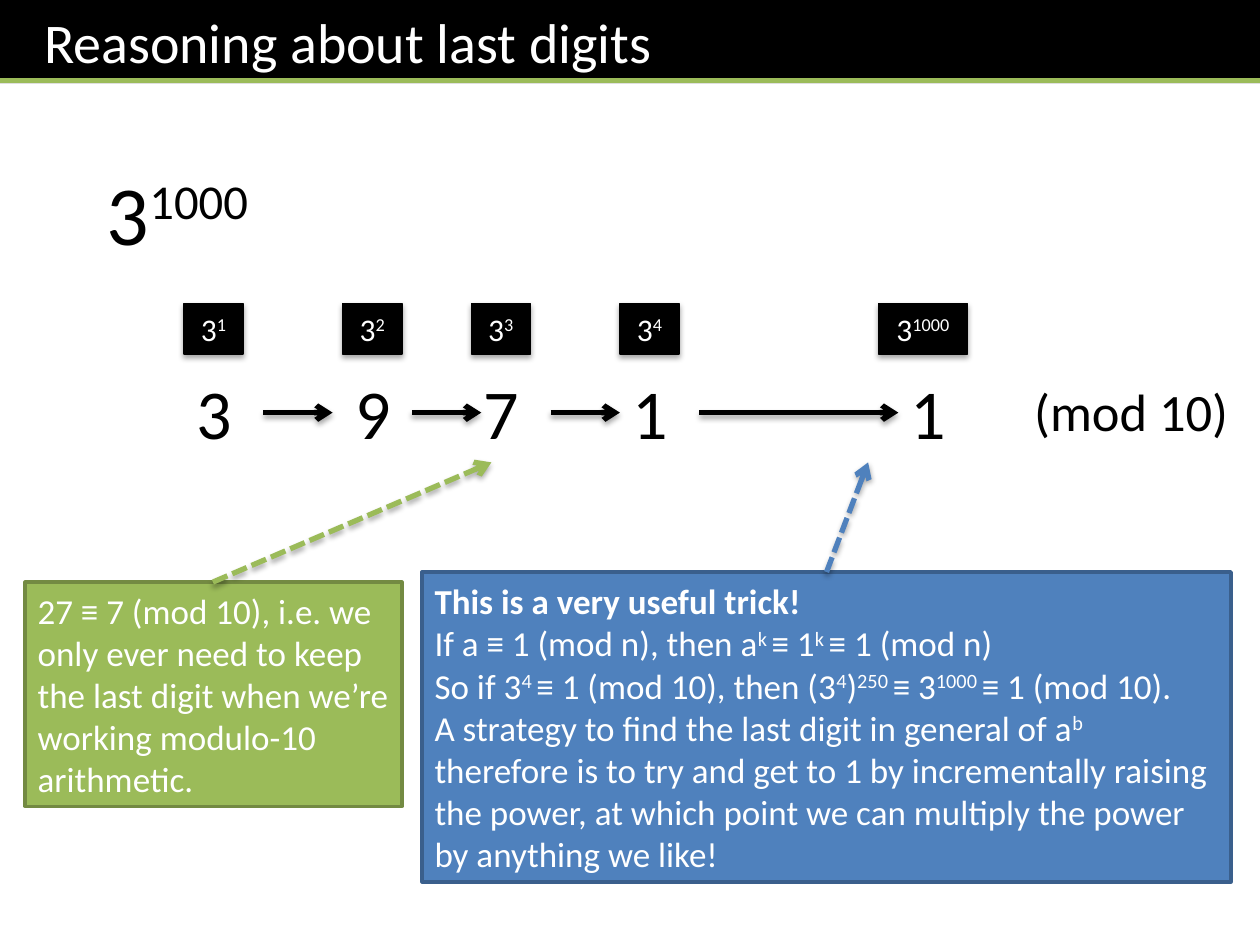
from lxml import etree
from pptx import Presentation
from pptx.dml.color import RGBColor
from pptx.enum.dml import MSO_LINE
from pptx.enum.shapes import MSO_CONNECTOR, MSO_SHAPE
from pptx.enum.text import MSO_ANCHOR, MSO_AUTO_SIZE, PP_ALIGN
from pptx.oxml.ns import qn
from pptx.util import Inches, Pt

RECT = MSO_SHAPE.RECTANGLE
STRAIGHT = MSO_CONNECTOR.STRAIGHT
DASH = MSO_LINE.SQUARE_DOT
LEFT, CENTER = PP_ALIGN.LEFT, PP_ALIGN.CENTER
TOP, MIDDLE = MSO_ANCHOR.TOP, MSO_ANCHOR.MIDDLE
GROW = MSO_AUTO_SIZE.SHAPE_TO_FIT_TEXT

COLS, ROWS = 100, 75
CELL = Inches(0.1)
FONT = "Calibri"
BLACK, WHITE, GREEN, BLUE = "000000", "FFFFFF", "9BBB59", "4F81BD"
DARK_GREEN, DARK_BLUE = "738A42", "3A5F8C"

LABEL_ROW, DIGIT_ROW, ARROW_ROW, NOTE_ARROW_ROW = 24.1, 28.8, 32.75, 36.7
# exponent, digit, digit column, label column, label width
STEPS = [
    ("1", "3", 14.6, 14.6, 4.7),
    ("2", "9", 27.2, 27.2, 4.7),
    ("3", "7", 37.4, 37.4, 4.7),
    ("4", "1", 49.2, 49.2, 4.7),
    ("1000", "1", 71.3, 69.7, 7.1),
]
STEP_ARROWS = [(20.9, 26.4), (32.7, 38.2), (43.7, 49.2), (55.5, 71.3)]

GREEN_NOTE = [
    "27 ≡ 7 (mod 10), i.e. we only ever need to keep the last digit "
    "when we’re working modulo-10 arithmetic."
]
BLUE_NOTE = [
    "This is a very useful trick!",
    "If a ≡ 1 (mod n), then a|k |≡ 1|k |≡ 1 (mod n)",
    "So if 3|4 |≡ 1 (mod 10), then (3|4|)|250 |≡ 3|1000 |≡ 1 (mod 10).",
    "A strategy to find the last digit in general of a|b| therefore is to try "
    "and get to 1 by incrementally raising the power, at which point we can "
    "multiply the power by anything we like!",
]


def rgb(color):
    return RGBColor.from_string(color)


def grid(*cells):
    return [round(n * CELL) for n in cells]


def add_shadow(effects):
    """Put a soft shadow below the object into its effect list."""
    shadow = etree.SubElement(effects, qn("a:outerShdw"), blurRad="40000",
                              dist="23000", dir="5400000", rotWithShape="0")
    color = etree.SubElement(shadow, qn("a:srgbClr"), val=BLACK)
    etree.SubElement(color, qn("a:alpha"), val="35000")


def write(sp, lines, size, color, align=LEFT, anchor=TOP):
    """Fill sp with paragraphs; every second part between bars is superscript."""
    tf = sp.text_frame
    tf.word_wrap = True
    tf.vertical_anchor = anchor
    for i, line in enumerate(lines):
        p = tf.paragraphs[0] if i == 0 else tf.add_paragraph()
        p.alignment = align
        p.font.name, p.font.size = FONT, Pt(size)
        p.font.color.rgb = rgb(color)
        for j, part in enumerate(line.split("|")):
            r = p.add_run()
            r.text = part
            if j % 2:
                r._r.get_or_add_rPr().set("baseline", "30000")
    return tf


def add_text(s, cells, text, size):
    sp = s.shapes.add_textbox(*grid(*cells))
    write(sp, [text], size, BLACK).auto_size = GROW


def add_box(s, cells, fill, line=None, width=0.75):
    sp = s.shapes.add_shape(RECT, *grid(*cells))
    sp.shadow.inherit = False
    sp.fill.solid()
    sp.fill.fore_color.rgb = rgb(fill)
    if line:
        sp.line.color.rgb = rgb(line)
        sp.line.width = Pt(width)
    else:
        sp.line.fill.background()
    return sp


def add_line(s, ends, color, arrow=True, dash=None):
    cx = s.shapes.add_connector(STRAIGHT, *grid(*ends))
    cx.line.color.rgb = rgb(color)
    cx.line.width = Pt(3)
    if dash:
        cx.line.dash_style = dash
    props = cx._element.spPr
    effects = etree.SubElement(props, qn("a:effectLst"))
    if arrow:
        etree.SubElement(props.find(qn("a:ln")), qn("a:tailEnd"), type="arrow")
        add_shadow(effects)


def add_label(s, cells, text):
    sp = add_box(s, cells, BLACK, BLACK)
    add_shadow(sp._element.spPr.find(qn("a:effectLst")))
    write(sp, [text], 18, WHITE, CENTER, MIDDLE).auto_size = GROW


def add_note(s, cells, lines, fill, line, arrow):
    """Add a coloured note with a dashed arrow up to the digit it explains."""
    start, end = arrow
    sp = add_box(s, cells, fill, line, 2)
    tf = write(sp, lines, 20, WHITE, anchor=MIDDLE)
    add_line(s, (start, cells[1], end, NOTE_ARROW_ROW), fill, dash=DASH)
    return tf


def add_title(s, text):
    sp = add_box(s, (0, 0, COLS, 6.6), BLACK)
    tf = write(sp, [text], 32, WHITE, anchor=MIDDLE)
    tf.margin_left = Inches(0.35)
    tf.auto_size = GROW
    add_line(s, (0, 6.4, COLS, 6.4), GREEN, arrow=False)


def main():
    prs = Presentation()
    prs.slide_width, prs.slide_height = grid(COLS, ROWS)
    s = prs.slides.add_slide(prs.slide_layouts[6])

    add_text(s, (7.5, 12.3, 19.7, 9.1), "3|1000", 48)
    for exponent, digit, digit_col, label_col, label_width in STEPS:
        add_text(s, (digit_col, DIGIT_ROW, 6.3, 7.7), digit, 40)
        add_label(s, (label_col, LABEL_ROW, label_width, 4), "3|" + exponent)
    for start, end in STEP_ARROWS:
        add_line(s, (start, ARROW_ROW, end, ARROW_ROW), BLACK)
    add_text(s, (81.1, 29.6, 18.9, 6.1), "(mod 10)", 30)

    add_note(s, (2, 46.2, 29.9, 17.8), GREEN_NOTE, GREEN, DARK_GREEN, (16.9, 39))
    tf = add_note(s, (33.5, 45.4, 64.2, 24.6), BLUE_NOTE, BLUE, DARK_BLUE,
                  (65.6, 68.9))
    tf.paragraphs[0].font.bold = True
    add_title(s, "Reasoning about last digits")

    prs.save("out.pptx")


if __name__ == "__main__":
    main()
